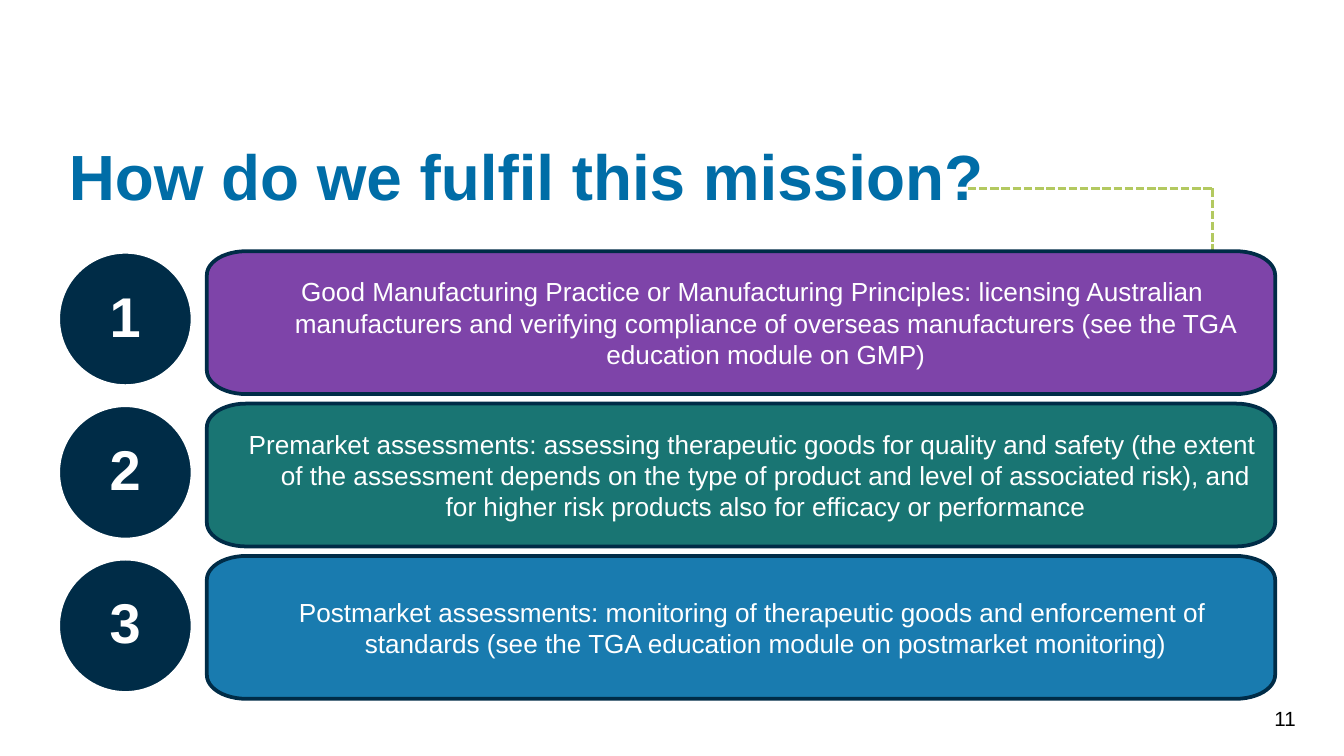
from dataclasses import dataclass
from math import cos, pi, sin

from lxml.etree import SubElement
from pptx import Presentation
from pptx.dml.color import RGBColor
from pptx.enum.dml import MSO_LINE_DASH_STYLE as Dash
from pptx.enum.shapes import MSO_CONNECTOR as Connector, MSO_SHAPE as Shape
from pptx.enum.text import MSO_ANCHOR as Anchor, PP_ALIGN as Align
from pptx.oxml.ns import qn
from pptx.util import Cm, Pt

FONT = "Arial"
COLORS = {
    "navy": "002C47",
    "purple": "7030A0",
    "teal": "006664",
    "blue": "006DA7",
    "lime": "B3C960",
    "white": "FFFFFF",
    "black": "000000",
}

# Lengths in centimetres
BAR_LEFT, BAR_TOP, BAR_WIDTH, BAR_HEIGHT, BAR_PITCH = 3.91, 4.75, 20.19, 2.7, 2.88
CORNER_X, CORNER_Y = 0.74, 0.45
CIRCLE_LEFT, CIRCLE_TOP, CIRCLE_SIZE, CIRCLE_PITCH = 1.1, 4.76, 2.54, 2.9
GUIDE_LEFT, GUIDE_RIGHT, GUIDE_TOP = 18.29, 22.91, 3.56


@dataclass
class Step:
    color: str
    text: str


STEPS = [
    Step("purple", "Good Manufacturing Practice or Manufacturing Principles: licensing "
         "Australian manufacturers and verifying compliance of overseas manufacturers "
         "(see the TGA education module on GMP)"),
    Step("teal", "Premarket assessments: assessing therapeutic goods for quality and safety "
         "(the extent of the assessment depends on the type of product and level of "
         "associated risk), and for higher risk products also for efficacy or performance"),
    Step("blue", "Postmarket assessments: monitoring of therapeutic goods and enforcement "
         "of standards (see the TGA education module on postmarket monitoring)"),
]


def rgb(name: str) -> RGBColor:
    return RGBColor.from_string(COLORS[name])


def write(s, text: str, size: float, color: str, align: Align, anchor: Anchor,
          bold: bool = False, inset: float = 0):
    """Put one formatted run in the shape and return its paragraph."""
    tf = s.text_frame
    tf.word_wrap = True
    tf.vertical_anchor = anchor
    tf.margin_left = tf.margin_right = tf.margin_top = tf.margin_bottom = Cm(inset)
    p = tf.paragraphs[0]
    p.alignment = align
    r = p.add_run()
    r.text = text
    r.font.name, r.font.size, r.font.bold = FONT, Pt(size), bold
    r.font.color.rgb = rgb(color)
    return p


def paint(s, fill: str, line: str) -> None:
    s.shadow.inherit = False
    s.fill.solid()
    s.fill.fore_color.rgb = rgb(fill)
    s.line.color.rgb = rgb(line)
    s.line.width = Pt(2)


def bar_outline(top: float) -> list[tuple[int, int]]:
    """Points of a rectangle with elliptical corners, clockwise from the left."""
    x1, x2 = BAR_LEFT + CORNER_X, BAR_LEFT + BAR_WIDTH - CORNER_X
    y1, y2 = top + CORNER_Y, top + BAR_HEIGHT - CORNER_Y
    centres = [(x1, y1), (x2, y1), (x2, y2), (x1, y2)]
    steps = 12
    points = []
    for corner, (x, y) in enumerate(centres):
        for i in range(steps + 1):
            angle = pi + (corner + i / steps) * pi / 2
            points.append((Cm(x + CORNER_X * cos(angle)), Cm(y + CORNER_Y * sin(angle))))
    return points


def add_bar(shapes, step: Step, top: float) -> None:
    start, *rest = bar_outline(top)
    builder = shapes.build_freeform(*start)
    builder.add_line_segments(rest, close=True)
    s = builder.convert_to_shape()
    paint(s, step.color, "navy")
    color = s.fill._xPr.find(qn("a:solidFill"))[0]
    SubElement(color, qn("a:alpha"), val="90000")
    p = write(s, step.text, 14, "white", Align.CENTER, Anchor.MIDDLE, inset=0.2)
    pPr = p._p.get_or_add_pPr()
    pPr.set("marL", str(Cm(0.94)))
    pPr.set("indent", str(Cm(-0.5)))


def add_number(shapes, number: int, top: float) -> None:
    s = shapes.add_shape(Shape.OVAL, Cm(CIRCLE_LEFT), Cm(top),
                         Cm(CIRCLE_SIZE), Cm(CIRCLE_SIZE))
    paint(s, "navy", "white")
    p = write(s, str(number), 30, "white", Align.CENTER, Anchor.MIDDLE, bold=True)
    p.line_spacing = 0.9


def add_guide(shapes, x1: float, y1: float, x2: float, y2: float) -> None:
    line = shapes.add_connector(Connector.STRAIGHT, Cm(x1), Cm(y1), Cm(x2), Cm(y2))
    line.line.color.rgb = rgb("lime")
    line.line.width = Pt(1.5)
    line.line.dash_style = Dash.SQUARE_DOT
    SubElement(line._element.spPr, qn("a:effectLst"))


def main() -> None:
    prs = Presentation()
    prs.slide_width, prs.slide_height = Cm(25.4), Cm(14.29)
    slide = prs.slides.add_slide(prs.slide_layouts[5])
    shapes = slide.shapes

    title = shapes.title
    title.left, title.top, title.width, title.height = Cm(1.3), Cm(2.54), Cm(23), Cm(1.5)
    write(title, "How do we fulfil this mission?", 34.2, "blue",
          Align.LEFT, Anchor.BOTTOM, bold=True)

    add_guide(shapes, GUIDE_RIGHT, GUIDE_TOP, GUIDE_RIGHT, BAR_TOP)
    for i, step in enumerate(STEPS):
        add_bar(shapes, step, BAR_TOP + i * BAR_PITCH)
        add_number(shapes, i + 1, CIRCLE_TOP + i * CIRCLE_PITCH)
    add_guide(shapes, GUIDE_LEFT, GUIDE_TOP, GUIDE_RIGHT, GUIDE_TOP)

    page = shapes.add_textbox(Cm(18.29), Cm(13.34), Cm(6.2), Cm(0.76))
    write(page, "11", 11, "black", Align.RIGHT, Anchor.TOP)

    prs.save("out.pptx")


if __name__ == "__main__":
    main()
